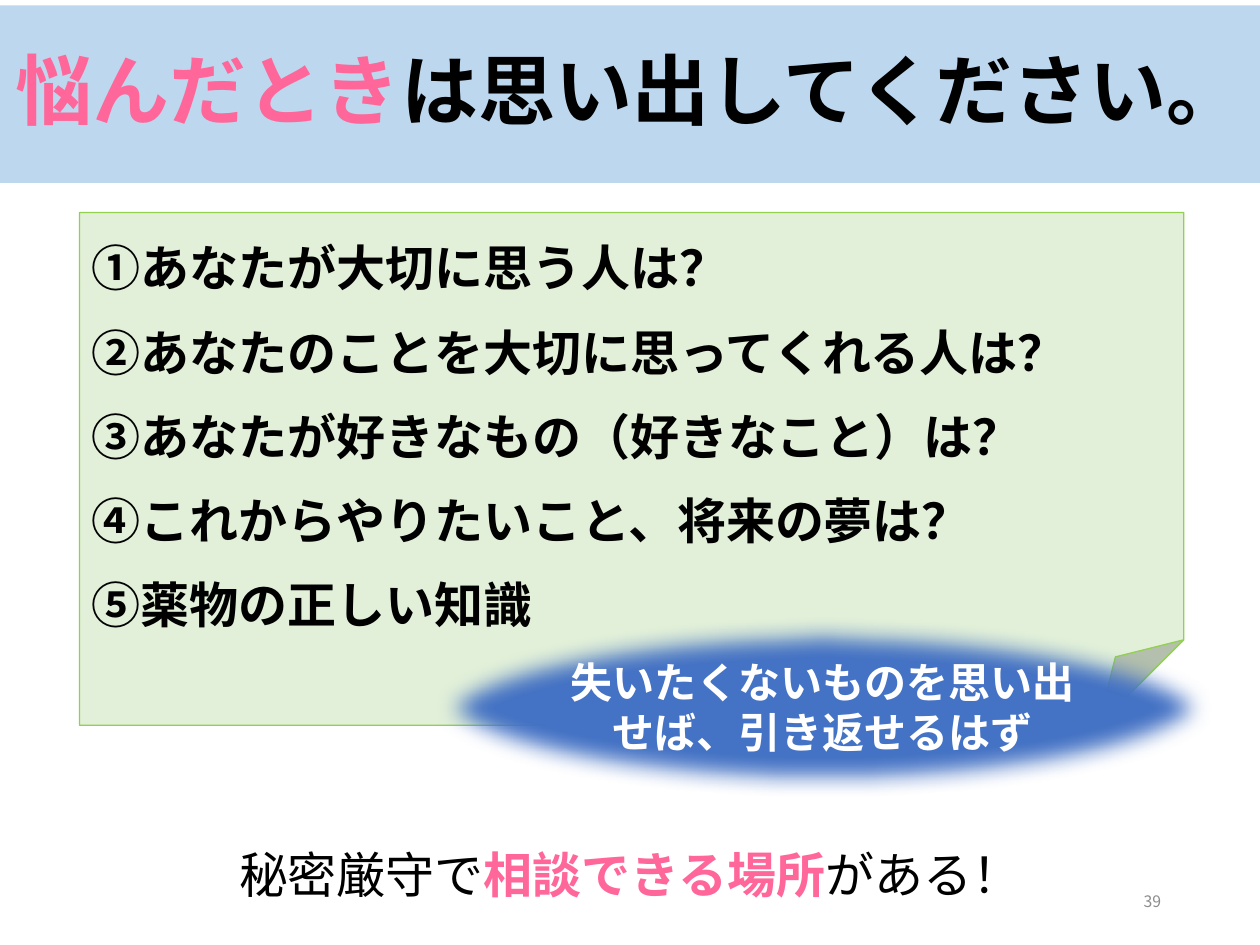
import dataclasses
import typing

import lxml.etree
import pptx
import pptx.dml.color
import pptx.enum.shapes
import pptx.enum.text
import pptx.oxml.ns
import pptx.util

Pt = pptx.util.Pt
Align = pptx.enum.text.PP_ALIGN
Anchor = pptx.enum.text.MSO_ANCHOR
Preset = pptx.enum.shapes.MSO_SHAPE


@dataclasses.dataclass(frozen=True)
class Theme:
    font: str = "Noto Sans CJK JP"
    black: str = "000000"
    white: str = "FFFFFF"
    pink: str = "FF6699"
    gray: str = "8C8C8C"
    band: str = "BDD7EE"
    note: str = "E2F0D9"
    note_line: str = "92D050"
    bubble: str = "4472C4"
    bubble_line: str = "325491"
    title_size: float = 44
    body_size: float = 28
    bubble_size: float = 24
    number_size: float = 9


THEME = Theme()


class Box(typing.NamedTuple):
    left: float
    top: float
    width: float
    height: float

    def lengths(self) -> list[pptx.util.Length]:
        return [Pt(value) for value in self]


class Span(typing.NamedTuple):
    text: str
    color: str = THEME.black
    bold: bool = True


@dataclasses.dataclass(frozen=True)
class TextStyle:
    size: float
    alignment: Align = Align.CENTER
    anchor: Anchor = Anchor.MIDDLE
    line_spacing: float = 1.0
    space_before: float = 0


@dataclasses.dataclass(frozen=True)
class Panel:
    preset: Preset
    box: Box
    fill: str
    line: str
    line_width: float
    lines: list[list[Span]]
    style: TextStyle
    soft_edge: float | None = None


@dataclasses.dataclass(frozen=True)
class Label:
    box: Box
    spans: list[Span]
    style: TextStyle


TITLE_BOX = Box(0, 3, 720, 101.5)
TITLE_SPANS = [Span("悩んだとき", THEME.pink), Span("は思い出してください。")]

QUESTIONS = [
    "①あなたが大切に思う人は？",
    "②あなたのことを大切に思ってくれる人は？",
    "③あなたが好きなもの（好きなこと）は？",
    "④これからやりたいこと、将来の夢は？",
    "⑤薬物の正しい知識",
]

PANELS = [
    Panel(
        Preset.FOLDED_CORNER, Box(45.5, 121.5, 631, 293),
        THEME.note, THEME.note_line, 0.75,
        [[Span(question)] for question in QUESTIONS],
        TextStyle(THEME.body_size, Align.LEFT, Anchor.BOTTOM, space_before=14.5),
    ),
    Panel(
        Preset.OVAL, Box(242, 353, 456, 101.5),
        THEME.bubble, THEME.bubble_line, 1,
        [[Span("失いたくないものを思い出せば、引き返せるはず", THEME.white)]],
        TextStyle(THEME.bubble_size),
        soft_edge=12.5,
    ),
]

LABELS = [
    Label(
        Box(93.5, 479, 533, 41),
        [Span("秘密厳守で", bold=False), Span("相談できる場所", THEME.pink), Span("がある！", bold=False)],
        TextStyle(THEME.body_size, anchor=Anchor.TOP),
    ),
    Label(
        Box(508.5, 500.5, 162, 28.5),
        [Span("39", THEME.gray, False)],
        TextStyle(THEME.number_size, Align.RIGHT),
    ),
]


def rgb(color: str) -> pptx.dml.color.RGBColor:
    return pptx.dml.color.RGBColor.from_string(color)


def write_text(shape, lines: list[list[Span]], style: TextStyle) -> None:
    text_frame = shape.text_frame
    text_frame.word_wrap = True
    text_frame.auto_size = pptx.enum.text.MSO_AUTO_SIZE.NONE
    text_frame.vertical_anchor = style.anchor
    for index, spans in enumerate(lines):
        paragraph = text_frame.add_paragraph() if index else text_frame.paragraphs[0]
        paragraph.alignment = style.alignment
        paragraph.line_spacing = style.line_spacing
        paragraph.space_before = Pt(style.space_before if index else 0)
        for span in spans:
            run = paragraph.add_run()
            run.text = span.text
            run.font.size = Pt(style.size)
            run.font.bold = span.bold
            run.font.color.rgb = rgb(span.color)
            run.font.name = THEME.font
            lxml.etree.SubElement(
                run.font._element, pptx.oxml.ns.qn("a:ea"), typeface=THEME.font
            )


def set_fill(shape, color: str) -> None:
    shape.fill.solid()
    shape.fill.fore_color.rgb = rgb(color)


def draw_title(slide) -> None:
    title = slide.shapes.title
    title.left, title.top, title.width, title.height = TITLE_BOX.lengths()
    set_fill(title, THEME.band)
    write_text(title, [TITLE_SPANS], TextStyle(THEME.title_size, line_spacing=0.9))


def draw_panel(slide, panel: Panel) -> None:
    shape = slide.shapes.add_shape(panel.preset, *panel.box.lengths())
    set_fill(shape, panel.fill)
    shape.line.color.rgb = rgb(panel.line)
    shape.line.width = Pt(panel.line_width)
    shape.shadow.inherit = False
    if panel.soft_edge is not None:
        effects = shape._element.spPr.find(pptx.oxml.ns.qn("a:effectLst"))
        lxml.etree.SubElement(
            effects, pptx.oxml.ns.qn("a:softEdge"), rad=str(int(Pt(panel.soft_edge)))
        )
    write_text(shape, panel.lines, panel.style)


def draw_label(slide, label: Label) -> None:
    shape = slide.shapes.add_textbox(*label.box.lengths())
    write_text(shape, [label.spans], label.style)


def main() -> None:
    presentation = pptx.Presentation()
    presentation.slide_width, presentation.slide_height = Pt(720), Pt(540)
    layout = presentation.slide_layouts.get_by_name("Title Only")
    slide = presentation.slides.add_slide(layout)
    draw_title(slide)
    for panel in PANELS:
        draw_panel(slide, panel)
    for label in LABELS:
        draw_label(slide, label)
    presentation.save("out.pptx")


if __name__ == "__main__":
    main()
